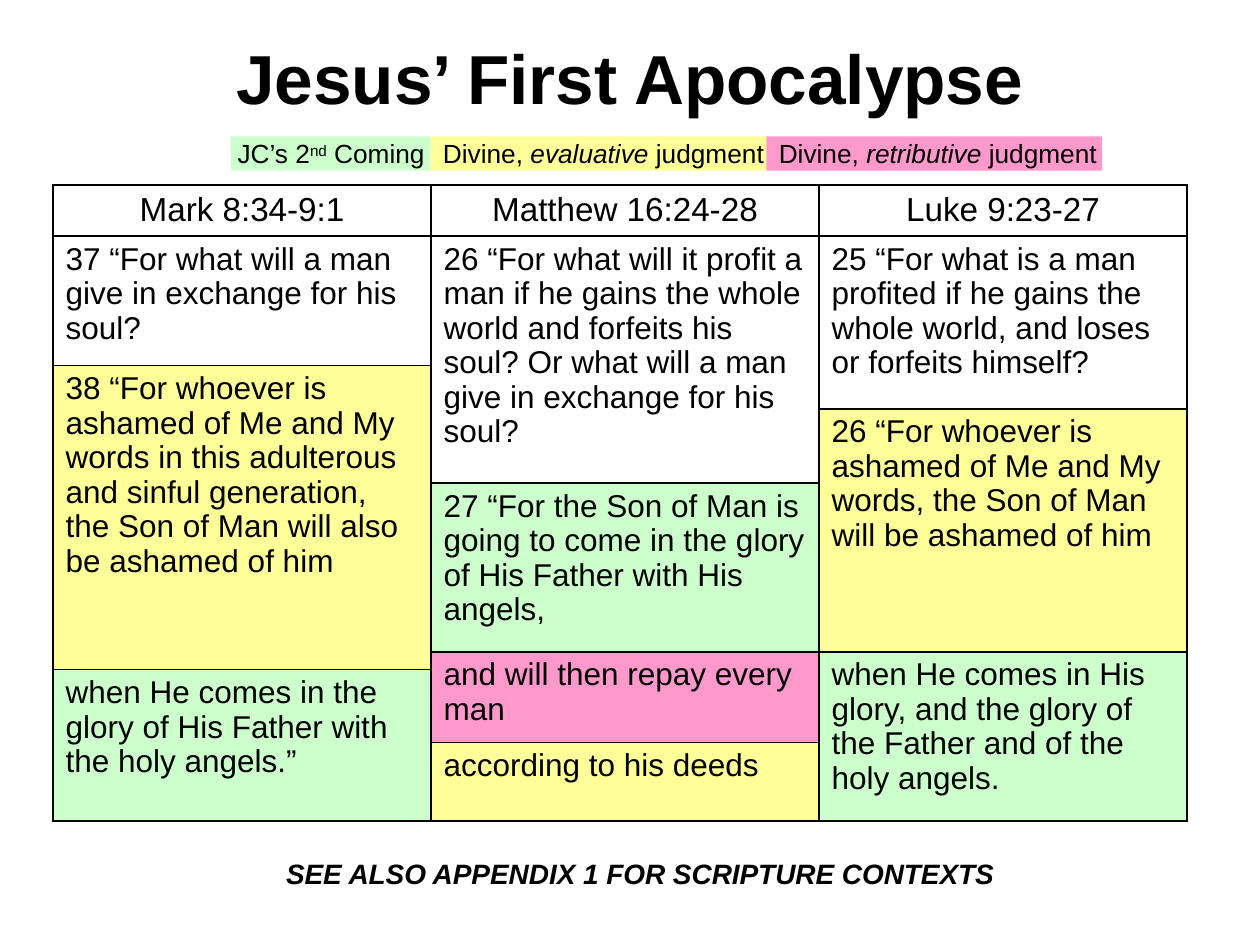
import pptx
import pptx.dml.color
import pptx.enum.shapes
import pptx.enum.text
import pptx.oxml
import pptx.oxml.ns
import pptx.util

Cm = pptx.util.Cm
Pt = pptx.util.Pt
ALIGN = pptx.enum.text.PP_ALIGN
MIDDLE = pptx.enum.text.MSO_ANCHOR.MIDDLE
BLACK, GREEN, YELLOW, PINK = "000000", "CCFFCC", "FFFF99", "FF99CC"

COLUMNS = [7.62, 7.82, 7.42]
ROWS = [1.03, 2.61, 0.87, 1.5, 3.4, 0.36, 1.47, 1.58]
HEADINGS = ["Mark 8:34-9:1", "Matthew 16:24-28", "Luke 9:23-27"]
PASSAGES = [
    [(1, "37 “For what will a man give in exchange for his soul?", None),
     (4, "38 “For whoever is ashamed of Me and My words in this adulterous and "
         "sinful generation, the Son of Man will also be ashamed of him", YELLOW),
     (2, "when He comes in the glory of His Father with the holy angels.”", GREEN)],
    [(3, "26 “For what will it profit a man if he gains the whole world and forfeits "
         "his soul? Or what will a man give in exchange for his soul?", None),
     (1, "27 “For the Son of Man is going to come in the glory of His Father "
         "with His angels,", GREEN),
     (2, "and will then repay every man", PINK),
     (1, "according to his deeds", YELLOW)],
    [(2, "25 “For what is a man profited if he gains the whole world, and loses or "
         "forfeits himself?", None),
     (2, "26 “For whoever is ashamed of Me and My words, the Son of Man will be "
         "ashamed of him", YELLOW),
     (3, "when He comes in His glory, and the glory of the Father and of the "
         "holy angels.", GREEN)],
]
LEGEND = [
    (4.02, 0.13, GREEN, [("JC’s 2", {}), ("nd", {"baseline": 30}), (" Coming", {})]),
    (6.77, 0.25, YELLOW, [("Divine, ", {}), ("evaluative", {"italic": True}), (" judgment", {})]),
    (6.77, 0.25, PINK, [("Divine, ", {}), ("retributive", {"italic": True}), (" judgment", {})]),
]


def rgb(color):
    """Return the colour for a hex string."""
    return pptx.dml.color.RGBColor.from_string(color)


def add_text(p, text, size=18, bold=False, italic=False, color=BLACK, baseline=0):
    """Append a formatted run to a paragraph."""
    r = p.add_run()
    r.text = text
    r.font.name = "Arial"
    r.font.size = Pt(size)
    r.font.bold = bold
    r.font.italic = italic
    r.font.color.rgb = rgb(color)
    if baseline:
        r._r.get_or_add_rPr().set("baseline", str(baseline * 1000))


def place(sp, left, top, width, height):
    """Move a shape to a box given in centimetres."""
    sp.left, sp.top, sp.width, sp.height = Cm(left), Cm(top), Cm(width), Cm(height)


def set_insets(tf, left):
    """Set the left inset and narrow other insets of a text frame."""
    tf.margin_left = Cm(left)
    tf.margin_top = tf.margin_right = tf.margin_bottom = Cm(0.03)
    tf.vertical_anchor = MIDDLE


def add_title(slide, left, top, width, height):
    """Fill and place the title."""
    sp = slide.shapes.title
    place(sp, left, top, width, height)
    sp.text_frame.vertical_anchor = MIDDLE
    p = sp.text_frame.paragraphs[0]
    p.alignment = ALIGN.CENTER
    add_text(p, "Jesus’ First Apocalypse", size=39.6, bold=True)


def add_legend(slide, left, top, height):
    """Add the coloured key as a row of adjoining rectangles."""
    group = slide.shapes.add_group_shape()
    for width, inset, color, runs in LEGEND:
        sp = group.shapes.add_shape(
            pptx.enum.shapes.MSO_SHAPE.RECTANGLE, Cm(left), Cm(top), Cm(width), Cm(height))
        sp.shadow.inherit = False
        sp.fill.solid()
        sp.fill.fore_color.rgb = rgb(color)
        sp.line.fill.background()
        set_insets(sp.text_frame, inset)
        sp.text_frame.word_wrap = False
        p = sp.text_frame.paragraphs[0]
        p.alignment = ALIGN.LEFT
        for text, style in runs:
            add_text(p, text, size=15, **style)
        left += width


def format_cell(cell, fill=None):
    """Give a cell thin black borders and an optional fill."""
    tcPr = cell._tc.get_or_add_tcPr()
    for side in "LRTB":
        tcPr.append(pptx.oxml.parse_xml(
            f'<a:ln{side} {pptx.oxml.ns.nsdecls("a")} w="12700"><a:solidFill>'
            f'<a:srgbClr val="{BLACK}"/></a:solidFill></a:ln{side}>'))
    if fill:
        cell.fill.solid()
        cell.fill.fore_color.rgb = rgb(fill)
    else:
        cell.fill.background()


def add_passages(slide, left, top):
    """Add the table of parallel passages."""
    table = slide.shapes.add_table(
        len(ROWS), len(COLUMNS), Cm(left), Cm(top), Cm(sum(COLUMNS)), Cm(sum(ROWS))).table
    table.first_row = table.horz_banding = False
    for row, height in zip(table.rows, ROWS):
        row.height = Cm(height)
    for c, (width, heading, passages) in enumerate(zip(COLUMNS, HEADINGS, PASSAGES)):
        table.columns[c].width = Cm(width)
        p = table.cell(0, c).text_frame.paragraphs[0]
        p.alignment = ALIGN.CENTER
        add_text(p, heading, size=19)
        format_cell(table.cell(0, c))
        start = 1
        for span, text, fill in passages:
            for r in range(start, start + span):
                format_cell(table.cell(r, c), fill)
            cell = table.cell(start, c)
            if span > 1:
                cell.merge(table.cell(start + span - 1, c))
            p = cell.text_frame.paragraphs[0]
            p.line_spacing = 0.98
            add_text(p, text)
            start += span


def add_footer(slide, left, top, width, height):
    """Add the closing reference line."""
    sp = slide.shapes.add_textbox(Cm(left), Cm(top), Cm(width), Cm(height))
    tf = sp.text_frame
    tf.word_wrap = True
    set_insets(tf, 0.25)
    p = tf.paragraphs[0]
    p.alignment = ALIGN.CENTER
    add_text(p, "SEE ALSO APPENDIX 1 FOR SCRIPTURE CONTEXTS", size=16, bold=True, italic=True)


def main():
    """Build and save the slide."""
    prs = pptx.Presentation()
    prs.slide_width, prs.slide_height = Cm(25.4), Cm(19.05)
    slide = prs.slides.add_slide(prs.slide_layouts[5])
    add_title(slide, 1.27, 0.76, 22.86, 1.58)
    add_passages(slide, 1.07, 3.73)
    add_legend(slide, 4.66, 2.75, 0.69)
    add_footer(slide, 5.28, 17.22, 15.04, 0.76)
    prs.save("out.pptx")


if __name__ == "__main__":
    main()
